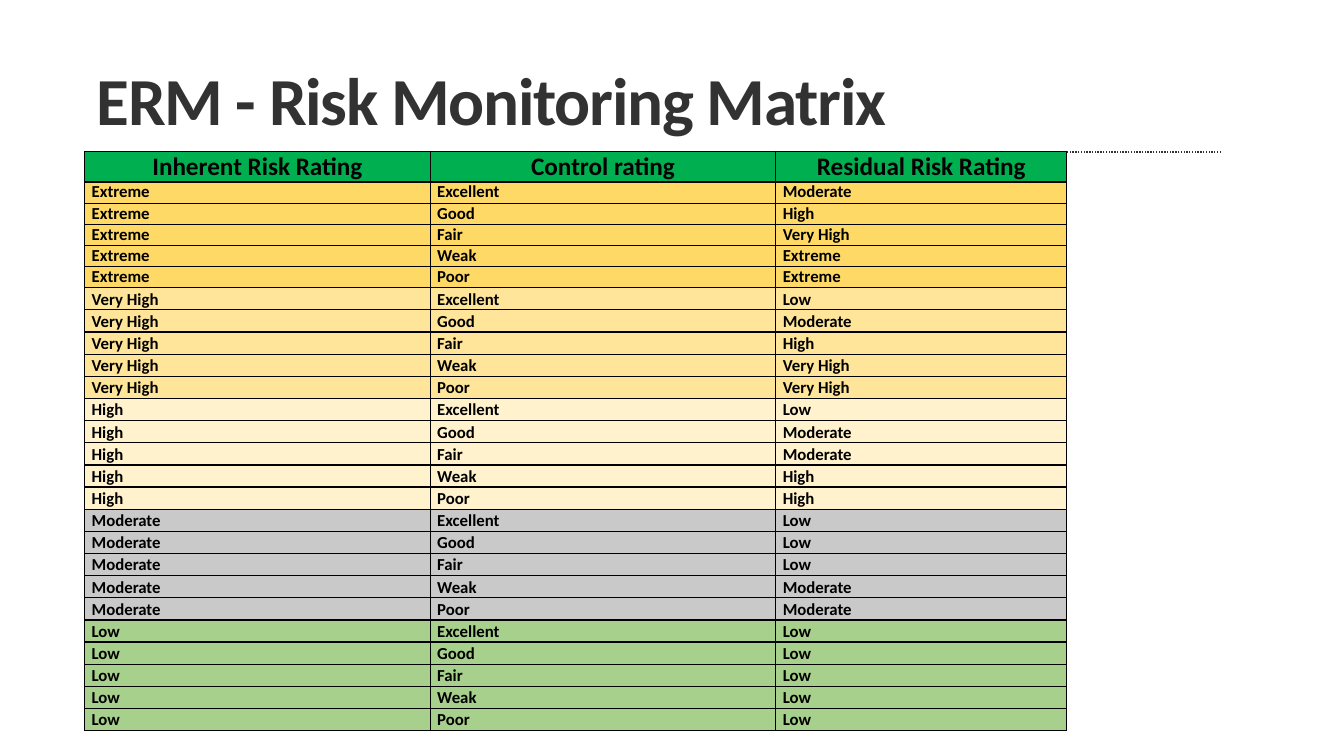
"""Build the ERM risk monitoring matrix slide."""
from dataclasses import dataclass

from lxml.etree import SubElement
from pptx import Presentation
from pptx.dml.color import RGBColor
from pptx.enum.dml import MSO_LINE
from pptx.enum.shapes import MSO_CONNECTOR
from pptx.enum.text import MSO_ANCHOR, MSO_AUTO_SIZE, PP_ALIGN
from pptx.oxml.ns import qn
from pptx.util import Inches, Pt

FONT = "Calibri"
INK = "323232"
BLACK = "000000"
HEADER_FILL = "00B050"
HEADERS = ("Inherent Risk Rating", "Control rating", "Residual Risk Rating")
CONTROLS = ("Excellent", "Good", "Fair", "Weak", "Poor")
COLUMN_WIDTHS = (3.43, 3.43, 2.89)
HEADER_HEIGHT = 0.3


@dataclass(frozen=True)
class RiskBand:
    inherent: str
    residuals: tuple[str, ...]
    fill: str
    row_height: float = 0.22
    line_spacing: float = 1.07


BANDS = (
    RiskBand("Extreme", ("Moderate", "High", "Very High", "Extreme", "Extreme"), "FFD966", 0.21, 1.0),
    RiskBand("Very High", ("Low", "Moderate", "High", "Very High", "Very High"), "FFE599"),
    RiskBand("High", ("Low", "Moderate", "Moderate", "High", "High"), "FFF2CC"),
    RiskBand("Moderate", ("Low", "Low", "Low", "Moderate", "Moderate"), "C9C9C9"),
    RiskBand("Low", ("Low", "Low", "Low", "Low", "Low"), "A8D08D"),
)


@dataclass(frozen=True)
class MatrixRow:
    texts: tuple[str, ...]
    fill: str
    height: float
    size: int = 12
    align: PP_ALIGN = PP_ALIGN.LEFT
    line_spacing: float = 1.0


def rgb(value: str) -> RGBColor:
    return RGBColor.from_string(value)


def add_run(p, text: str, size: int, color: str):
    r = p.add_run()
    r.text = text
    r.font.name = FONT
    r.font.size = Pt(size)
    r.font.bold = True
    r.font.color.rgb = rgb(color)
    return r


def add_title(s, text: str) -> None:
    title = s.shapes.title
    title.left, title.top = Inches(0.96), Inches(0.32)
    title.width, title.height = Inches(11.16), Inches(1.07)
    tf = title.text_frame
    tf.word_wrap = True
    tf.auto_size = MSO_AUTO_SIZE.NONE
    tf.vertical_anchor = MSO_ANCHOR.BOTTOM
    tf.margin_left = tf.margin_bottom = 0
    tf.margin_top, tf.margin_right = Inches(0.05), Inches(0.1)
    p = tf.paragraphs[0]
    p.alignment = PP_ALIGN.LEFT
    p.line_spacing = 0.9
    r = add_run(p, text, 48, INK)
    r.font._element.set("spc", "-90")


def add_title_rule(s) -> None:
    y = Inches(1.51)
    rule = s.shapes.add_connector(MSO_CONNECTOR.STRAIGHT, Inches(12.12), y, Inches(1.22), y)
    rule.line.color.rgb = rgb(INK)
    rule.line.width = Pt(1)
    rule.line.dash_style = MSO_LINE.ROUND_DOT
    SubElement(rule._element.spPr, qn("a:effectLst"))


def add_borders(cell) -> None:
    props = cell._tc.get_or_add_tcPr()
    for side in ("lnL", "lnR", "lnT", "lnB"):
        line = SubElement(props, qn(f"a:{side}"), w=str(Pt(1)))
        SubElement(SubElement(line, qn("a:solidFill")), qn("a:srgbClr"), val=BLACK)


def fill_cell(cell, text: str, row: MatrixRow) -> None:
    add_borders(cell)
    cell.fill.solid()
    cell.fill.fore_color.rgb = rgb(row.fill)
    cell.margin_left = cell.margin_right = Inches(0.07)
    cell.margin_top = cell.margin_bottom = 0
    p = cell.text_frame.paragraphs[0]
    p.alignment = row.align
    p.line_spacing = row.line_spacing
    add_run(p, text, row.size, BLACK)


def matrix_rows() -> list[MatrixRow]:
    header = MatrixRow(HEADERS, HEADER_FILL, HEADER_HEIGHT, 18, PP_ALIGN.CENTER)
    return [header] + [
        MatrixRow((band.inherent, control, residual), band.fill, band.row_height,
                  line_spacing=band.line_spacing)
        for band in BANDS
        for control, residual in zip(CONTROLS, band.residuals)
    ]


def add_matrix(s) -> None:
    rows = matrix_rows()
    frame = s.shapes.add_table(
        len(rows), len(HEADERS), Inches(0.84), Inches(1.5),
        Inches(sum(COLUMN_WIDTHS)), Inches(sum(row.height for row in rows)))
    table = frame.table
    table.horz_banding = False
    for column, width in zip(table.columns, COLUMN_WIDTHS):
        column.width = Inches(width)
    for table_row, row in zip(table.rows, rows):
        table_row.height = Inches(row.height)
        for cell, text in zip(table_row.cells, row.texts):
            fill_cell(cell, text, row)


def main() -> None:
    prs = Presentation()
    prs.slide_width, prs.slide_height = Inches(13.34), Inches(7.5)
    s = prs.slides.add_slide(prs.slide_layouts[5])
    add_title_rule(s)
    add_title(s, "ERM - Risk Monitoring Matrix")
    add_matrix(s)
    prs.save("out.pptx")


if __name__ == "__main__":
    main()
